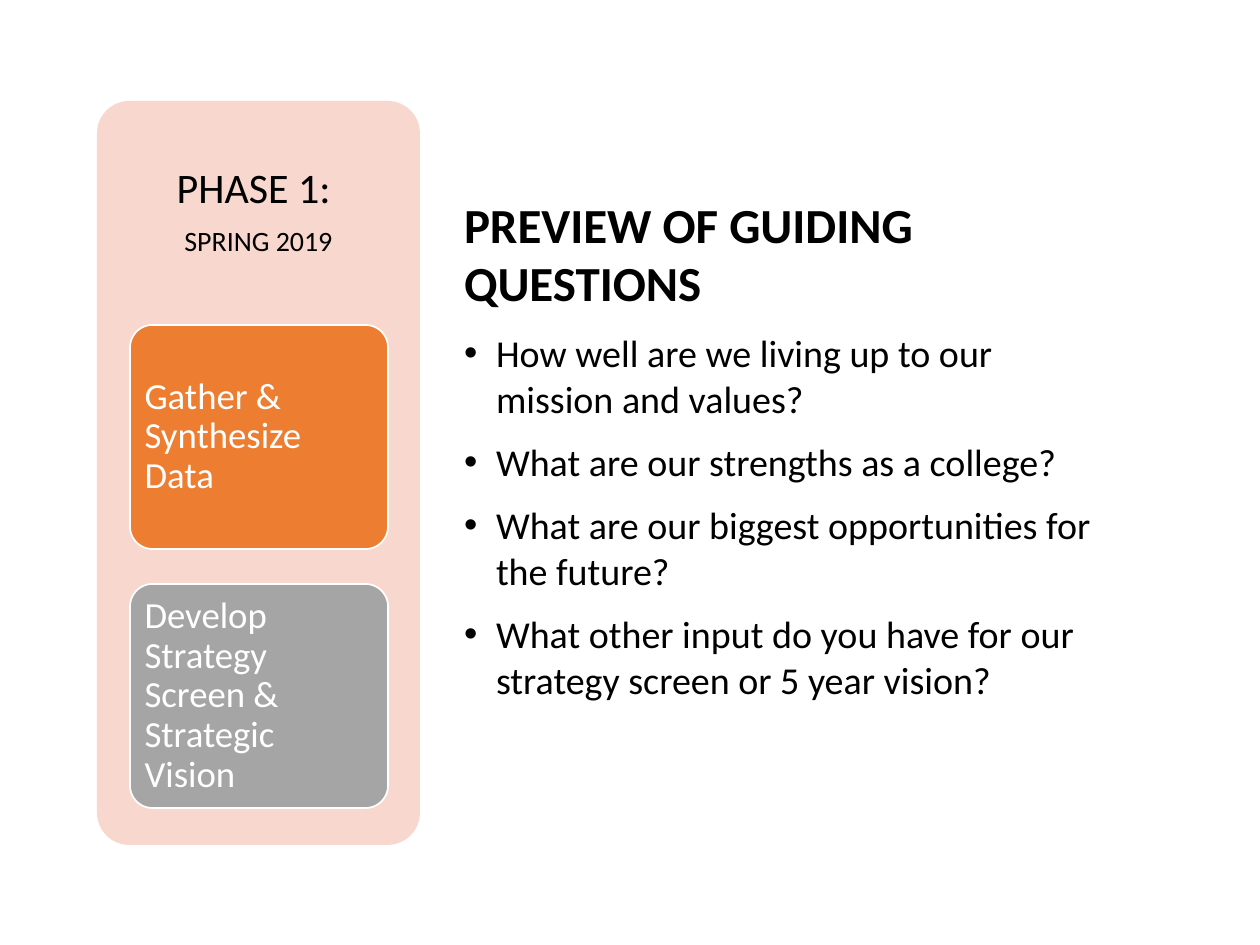
from lxml.etree import SubElement
from pptx import Presentation
from pptx.dml.color import RGBColor
from pptx.enum.shapes import MSO_SHAPE
from pptx.enum.text import MSO_ANCHOR, MSO_AUTO_SIZE, PP_ALIGN
from pptx.oxml.ns import qn
from pptx.util import Pt

EMU_PER_PX = 914400 / 126
COLORS = {
    "text": "000000",
    "white": "FFFFFF",
    "panel": "F8D7CE",
    "gather": "ED7D31",
    "develop": "A5A5A5",
}


def px(length):
    return round(length * EMU_PER_PX)


def rgb(name):
    return RGBColor.from_string(COLORS[name])


class PageBuilder:
    font = "Calibri"

    def __init__(self, page):
        self.page = page

    def place(self, shape, left, top, width, height):
        shape.left, shape.top = px(left), px(top)
        shape.width, shape.height = px(width), px(height)

    def frame(self, shape, anchor, across, down):
        frame = shape.text_frame
        frame.word_wrap = True
        frame.auto_size = MSO_AUTO_SIZE.NONE
        frame.vertical_anchor = anchor
        frame.margin_left = frame.margin_right = px(across)
        frame.margin_top = frame.margin_bottom = px(down)
        return frame

    def add_text(self, para, text, size, color="text", bold=False,
                 align=PP_ALIGN.LEFT, spacing=1.0, before=0):
        para.alignment = align
        para.line_spacing = spacing
        para.space_before = Pt(before)
        span = para.add_run()
        span.text = text
        span.font.name = self.font
        span.font.size = Pt(size)
        span.font.bold = bold
        span.font.color.rgb = rgb(color)

    def title(self, text, bounds):
        box = self.page.shapes.title
        self.place(box, *bounds)
        frame = self.frame(box, MSO_ANCHOR.TOP, 13, 6)
        self.add_text(frame.paragraphs[0], text, 28, bold=True)

    def bullets(self, items, bounds):
        box = self.page.placeholders[1]
        self.place(box, *bounds)
        frame = self.frame(box, MSO_ANCHOR.TOP, 13, 6)
        for index, item in enumerate(items):
            para = frame.add_paragraph() if index else frame.paragraphs[0]
            props = para._p.get_or_add_pPr()
            props.set("marL", str(px(32)))
            props.set("indent", str(-px(32)))
            SubElement(props, qn("a:buFont"), typeface="Arial")
            SubElement(props, qn("a:buChar"), char="•")
            self.add_text(para, item, 21.7, before=10 if index else 0)

    def rounded(self, bounds, fill, line=None):
        shape = self.page.shapes.add_shape(
            MSO_SHAPE.ROUNDED_RECTANGLE, *map(px, bounds))
        shape.adjustments[0] = 0.1
        shape.shadow.inherit = False
        shape.fill.solid()
        shape.fill.fore_color.rgb = rgb(fill)
        if line:
            shape.line.color.rgb = rgb(line)
            shape.line.width = Pt(1)
        else:
            shape.line.fill.background()
        return shape

    def card(self, text, bounds, fill):
        shape = self.rounded(bounds, fill, "white")
        frame = self.frame(shape, MSO_ANCHOR.MIDDLE, 8, 5)
        self.add_text(frame.paragraphs[0], text, 21, "white", spacing=0.9)

    def heading(self, lines, bounds):
        box = self.page.shapes.add_textbox(*map(px, bounds))
        frame = self.frame(box, MSO_ANCHOR.MIDDLE, 12, 12)
        for index, (text, size) in enumerate(lines):
            para = frame.add_paragraph() if index else frame.paragraphs[0]
            self.add_text(para, text, size, align=PP_ALIGN.CENTER,
                          spacing=0.9, before=8.4 if index else 0)


def main():
    deck = Presentation()
    deck.slide_width, deck.slide_height = px(1260), px(945)
    builder = PageBuilder(deck.slides.add_slide(deck.slide_layouts[1]))

    # Guiding questions
    builder.title("PREVIEW OF GUIDING QUESTIONS", (451, 188, 640, 131))
    builder.bullets([
        "How well are we living up to our mission and values?",
        "What are our strengths as a college?",
        "What are our biggest opportunities for the future?",
        "What other input do you have for our strategy screen or 5 year vision?",
    ], (451, 324, 670, 481))

    # Phase panel
    builder.rounded((97, 101, 323, 744), "panel")
    builder.heading([("PHASE 1: ", 24), ("SPRING 2019", 16)],
                    (97, 101, 323, 223))

    # Step cards
    steps = [("Gather & Synthesize Data", "gather"),
             ("Develop Strategy Screen & Strategic Vision", "develop")]
    for index, (text, fill) in enumerate(steps):
        builder.card(text, (130, 325 + index * 259, 258, 224), fill)

    deck.save("out.pptx")


if __name__ == "__main__":
    main()
